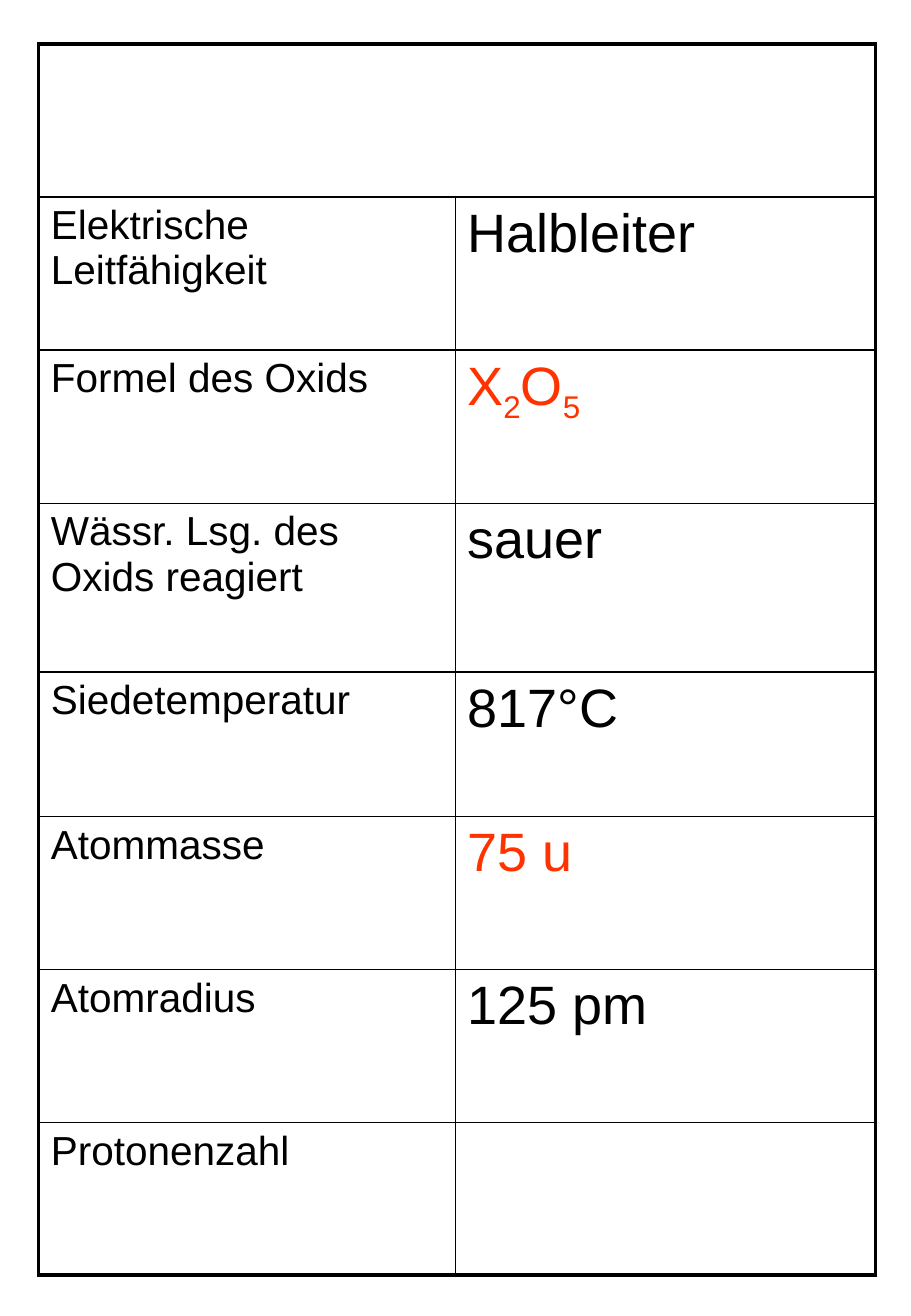
import pptx
import pptx.dml.color
import pptx.oxml.ns
import pptx.util
import lxml.etree

Cm = pptx.util.Cm
Pt = pptx.util.Pt

BLACK = pptx.dml.color.RGBColor(0x00, 0x00, 0x00)
RED = pptx.dml.color.RGBColor(0xFF, 0x33, 0x00)

THIN, THICK = Pt(1), Pt(2.25)
COLS = (8.71, 8.79)
ROWS = (3.2, 3.2, 3.2, 3.53, 3.02, 3.2, 3.2, 3.18)

# Label, parts of the value (every second part is a subscript), value colour
FACTS = (
    ("Elektrische Leitfähigkeit", ("Halbleiter",), BLACK),
    ("Formel des Oxids", ("X", "2", "O", "5"), RED),
    ("Wässr. Lsg. des Oxids reagiert", ("sauer",), BLACK),
    ("Siedetemperatur", ("817°C",), BLACK),
    ("Atommasse", ("75 u",), RED),
    ("Atomradius", ("125 pm",), BLACK),
    ("Protonenzahl", (), BLACK),
)


def add_node(parent, tag, **attrs):
    return lxml.etree.SubElement(parent, pptx.oxml.ns.qn(tag), **attrs)


def set_edges(cell, edges):
    """Draw the borders of a cell; edges maps L, R, T and B to widths."""
    props = cell._tc.get_or_add_tcPr()
    for side, width in edges.items():
        line = add_node(props, f"a:ln{side}", w=str(int(width)))
        fill = add_node(line, "a:solidFill")
        add_node(fill, "a:srgbClr", val=str(BLACK))


def write_text(cell, parts, size, color):
    """Write the parts as runs, lowering every second one."""
    para = cell.text_frame.paragraphs[0]
    for index, part in enumerate(parts):
        run = para.add_run()
        run.text = part
        run.font.name = "Arial"
        run.font.size = size
        run.font.color.rgb = color
        if index % 2:
            run.font._element.set("baseline", "-25000")


def add_grid(slide):
    frame = slide.shapes.add_table(
        len(ROWS), len(COLS), Cm(0.81), Cm(0.92), Cm(sum(COLS)), Cm(sum(ROWS)))
    table = frame.table
    table.first_row = table.horz_banding = False
    for col, width in zip(table.columns, COLS):
        col.width = Cm(width)
    for row, height in zip(table.rows, ROWS):
        row.height = Cm(height)
    table.cell(0, 0).merge(table.cell(0, 1))
    return table


def style_cells(table):
    """Give the grid a thick frame, thin inner lines and no fill."""
    last = len(ROWS) - 1
    for row in range(len(ROWS)):
        for col in range(len(COLS)):
            cell = table.cell(row, col)
            set_edges(cell, {
                "L": THICK if col == 0 else THIN,
                "R": THICK if col == 1 or row == 0 else THIN,
                "T": THICK if row == 0 else THIN,
                "B": THICK if row == last else THIN,
            })
            cell.fill.background()


def main():
    deck = pptx.Presentation()
    deck.slide_width, deck.slide_height = Cm(19.05), Cm(27.51)
    slide = deck.slides.add_slide(deck.slide_layouts[6])
    table = add_grid(slide)
    style_cells(table)
    for row, (label, value, color) in enumerate(FACTS, 1):
        write_text(table.cell(row, 0), (label,), Pt(24), BLACK)
        write_text(table.cell(row, 1), value, Pt(32), color)
    deck.save("out.pptx")


if __name__ == "__main__":
    main()
